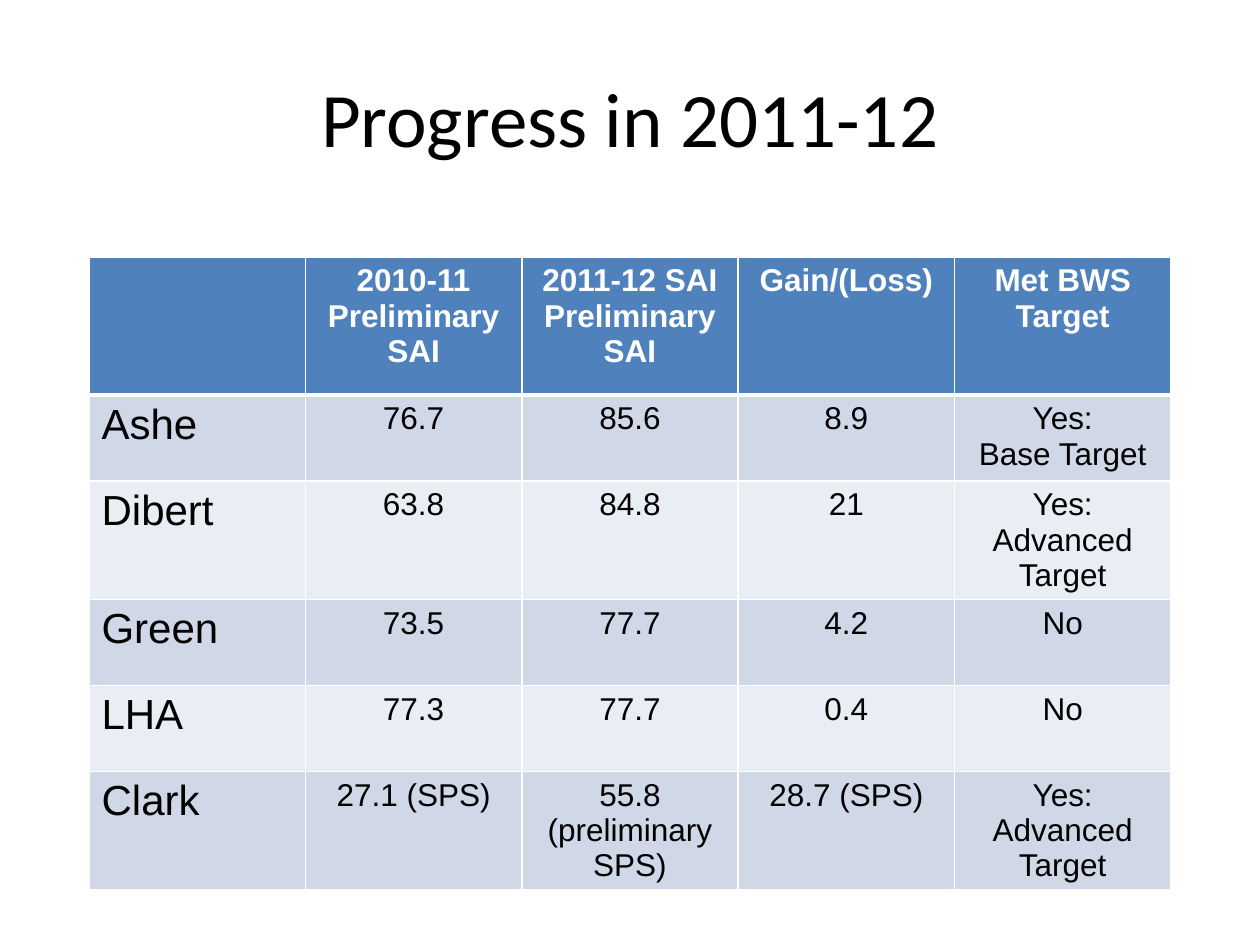
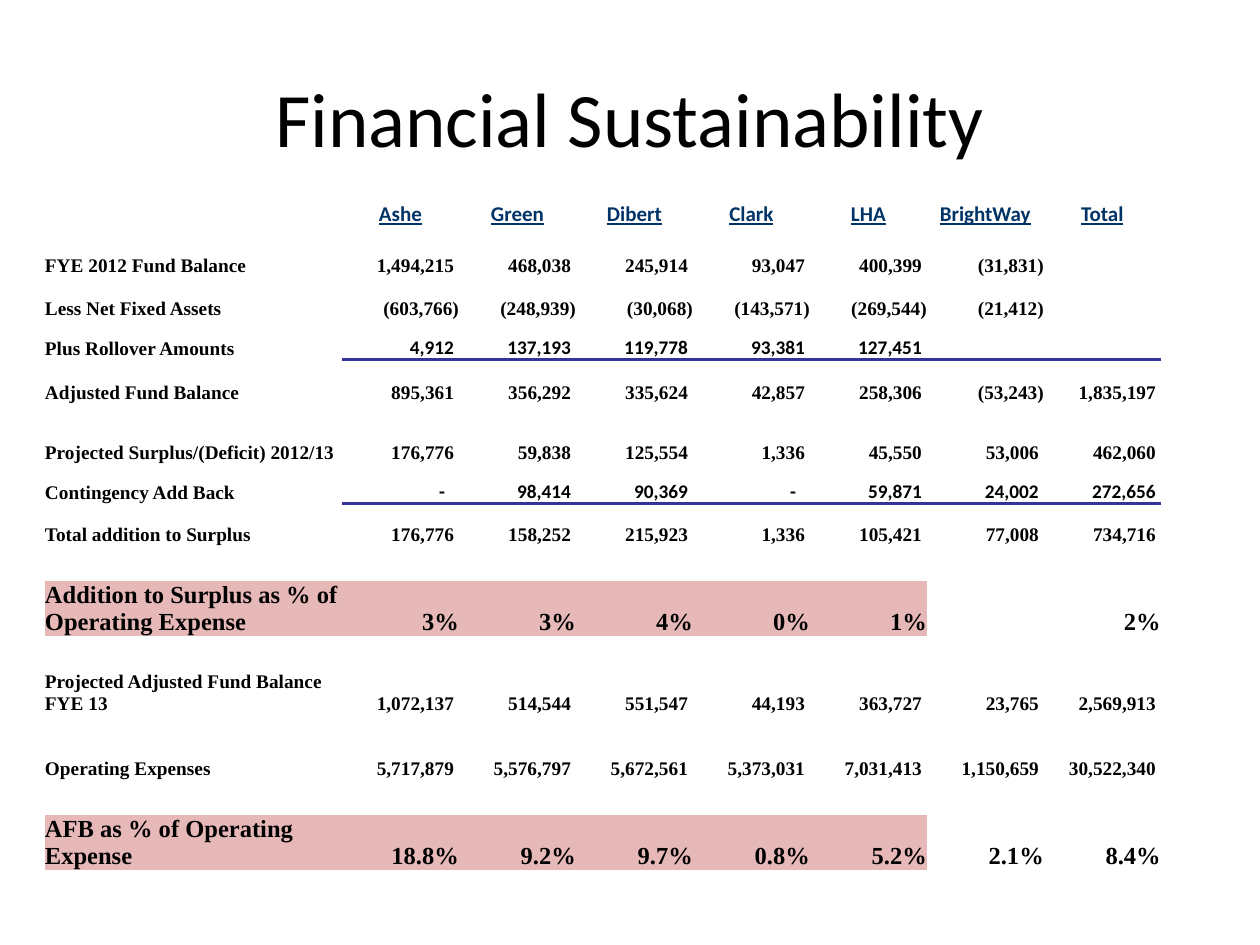
from lxml import etree
from pptx import Presentation
from pptx import util as u
from pptx.dml.color import RGBColor
from pptx.enum import text
from pptx.oxml.ns import qn

EMU_PER_PX = 914400 / 126
SLIDE_BOX = (1260, 945)
TITLE_BOX = (63, 38, 1134, 157)
PROGRESS_BOX = (89, 257, 1082, 632)
FINANCE_BOX = (45, 195, 1139, 675)
PLAIN_STYLE = "{2D5ABB26-0587-4C30-8999-92F81FD0307C}"

WHITE, BLACK = "FFFFFF", "000000"
HEADER_BLUE, BAND_DARK, BAND_LIGHT = "4F81BD", "D0D8E8", "E9EDF4"
NAVY, RULE_BLUE, PINK = "003366", "333399", "E6B9B8"
LEFT, CENTER, RIGHT = text.PP_ALIGN.LEFT, text.PP_ALIGN.CENTER, text.PP_ALIGN.RIGHT
TOP, MIDDLE, BOTTOM = text.MSO_ANCHOR.TOP, text.MSO_ANCHOR.MIDDLE, text.MSO_ANCHOR.BOTTOM

PROGRESS_HEIGHTS = [138, 86, 118, 86, 86, 118]
PROGRESS = [
    ["", "2010-11\nPreliminary SAI", "2011-12 SAI\nPreliminary SAI", "Gain/(Loss)", "Met BWS Target"],
    ["Ashe", "76.7", "85.6", "8.9", "Yes:\nBase Target"],
    ["Dibert", "63.8", "84.8", "21", "Yes: Advanced Target"],
    ["Green", "73.5", "77.7", "4.2", "No"],
    ["LHA", "77.3", "77.7", "0.4", "No"],
    ["Clark", "27.1 (SPS)", "55.8 (preliminary SPS)", "28.7 (SPS)", "Yes: Advanced Target"],
]

FINANCE_WIDTHS = [297] + [117] * 7 + [23]
FINANCE = [
    (39, "", "Ashe Green Dibert Clark LHA BrightWay Total"),
    (43, "FYE 2012 Fund Balance", "1,494,215 468,038 245,914 93,047 400,399 (31,831)"),
    (43, "Less Net Fixed Assets", "(603,766) (248,939) (30,068) (143,571) (269,544) (21,412)"),
    (40, "Plus Rollover Amounts", "4,912 137,193 119,778 93,381 127,451"),
    (44, "Adjusted Fund Balance", "895,361 356,292 335,624 42,857 258,306 (53,243) 1,835,197"),
    (20, "", ""),
    (40, "Projected Surplus/(Deficit) 2012/13", "176,776 59,838 125,554 1,336 45,550 53,006 462,060"),
    (40, "Contingency Add Back", "- 98,414 90,369 - 59,871 24,002 272,656"),
    (42, "Total addition to Surplus", "176,776 158,252 215,923 1,336 105,421 77,008 734,716"),
    (35, "", ""),
    (55, "Addition to Surplus as % of Operating Expense", "3% 3% 4% 0% 1% _ 2%"),
    (35, "", ""),
    (44, "Projected Adjusted Fund Balance FYE 13",
     "1,072,137 514,544 551,547 44,193 363,727 23,765 2,569,913"),
    (26, "", ""),
    (39, "Operating Expenses", "5,717,879 5,576,797 5,672,561 5,373,031 7,031,413 1,150,659 30,522,340"),
    (35, "", ""),
    (55, "AFB as % of Operating Expense", "18.8% 9.2% 9.7% 0.8% 5.2% 2.1% 8.4%"),
]
RULED_ROWS = {"Plus Rollover Amounts", "Contingency Add Back"}


def px(length):
    """Turn px into EMU."""
    return u.Emu(round(length * EMU_PER_PX))


def rgb(hex_color):
    """Turn a hex string into a colour."""
    return RGBColor.from_string(hex_color)


def write(frame, words, size=18, font="Arial", color=BLACK, bold=False, underline=False, align=LEFT):
    """Write one paragraph per line of words into a text frame."""
    frame.text = words
    for paragraph in frame.paragraphs:
        paragraph.alignment = align
        for run in paragraph.runs:
            run.font.size, run.font.name = u.Pt(size), font
            run.font.bold, run.font.underline = bold, underline
            run.font.color.rgb = rgb(color)
        if not words:
            etree.SubElement(paragraph._p, qn("a:endParaRPr"), sz=str(size * 100))


def border(cell, **sides):
    """Draw cell borders; each side (L, R, T, B) gives a colour and points."""
    for side, (color, points) in sides.items():
        line = etree.SubElement(cell._tc.get_or_add_tcPr(), qn(f"a:ln{side}"), w=str(u.Pt(points)))
        fill = etree.SubElement(line, qn("a:solidFill"))
        etree.SubElement(fill, qn("a:srgbClr"), val=color)


def paint(cell, color):
    """Fill a cell with one colour."""
    cell.fill.solid()
    cell.fill.fore_color.rgb = rgb(color)


def add_grid(slide, box, widths, heights):
    """Add an unstyled table at the box with given column widths and row heights."""
    table = slide.shapes.add_table(len(heights), len(widths), *map(px, box)).table
    table.first_row = table.horz_banding = False
    table._tbl.tblPr.find(qn("a:tableStyleId")).text = PLAIN_STYLE
    for column, width in zip(table.columns, widths):
        column.width = px(width)
    for row, height in zip(table.rows, heights):
        row.height = px(height)
    return table


def add_titled_slide(deck, heading):
    """Add a slide with the shared title style."""
    slide = deck.slides.add_slide(deck.slide_layouts[5])
    title = slide.shapes.title
    title.left, title.top, title.width, title.height = map(px, TITLE_BOX)
    title.text_frame.vertical_anchor = MIDDLE
    write(title.text_frame, heading, size=44, font="Calibri", align=CENTER)
    return slide


def progress_table(slide, box):
    """Place the banded table of school scores."""
    columns = len(PROGRESS[0])
    table = add_grid(slide, box, [box[2] / columns] * columns, PROGRESS_HEIGHTS)
    thin, thick = (WHITE, 1), (WHITE, 3)
    for r, scores in enumerate(PROGRESS):
        header = r == 0
        band = HEADER_BLUE if header else BAND_DARK if r % 2 else BAND_LIGHT
        for c, score in enumerate(scores):
            cell = table.cell(r, c)
            border(cell, L=thin, R=thin, T=thick if r == 1 else thin, B=thick if header else thin)
            paint(cell, band)
            school = c == 0 and not header
            write(cell.text_frame, score, size=24 if school else 18, bold=header,
                  color=WHITE if header else BLACK, align=LEFT if school else CENTER)


def right_inset(amount):
    """Return the accounting inset that lines digits up beside brackets."""
    if amount == "-":
        return 14
    return 0 if amount.endswith((")", "%")) else 5


def finance_table(slide, box):
    """Place the fund balance table with its ruled and highlighted rows."""
    table = add_grid(slide, box, FINANCE_WIDTHS, [height for height, _, _ in FINANCE])
    for r, (_, label, amounts) in enumerate(FINANCE):
        header, ruled, ratio = r == 0, label in RULED_ROWS, "%" in label
        entries = [label] + ["" if amount == "_" else amount for amount in amounts.split()]
        entries += [""] * (len(FINANCE_WIDTHS) - len(entries))
        for c, entry in enumerate(entries):
            cell = table.cell(r, c)
            cell.margin_left = cell.margin_top = cell.margin_bottom = 0
            cell.margin_right = px(0 if header or c == 0 else right_inset(entry))
            cell.vertical_anchor = MIDDLE if header else BOTTOM
            if ruled and 1 <= c <= 7:
                border(cell, B=(RULE_BLUE, 2))
            if ratio and c <= 5:
                paint(cell, PINK)
            if not entry:
                write(cell.text_frame, "", size=8)
            elif header:
                write(cell.text_frame, entry, size=12, font="Calibri", color=NAVY,
                      bold=True, underline=True, align=CENTER)
            else:
                write(cell.text_frame, entry, size=14 if ratio else 11, bold=True,
                      font="Calibri" if ruled and c else "Times New Roman",
                      align=RIGHT if c else LEFT)


def main():
    """Build and save the deck."""
    deck = Presentation()
    deck.slide_width, deck.slide_height = map(px, SLIDE_BOX)
    progress_table(add_titled_slide(deck, "Progress in 2011-12"), PROGRESS_BOX)
    finance_table(add_titled_slide(deck, "Financial Sustainability"), FINANCE_BOX)
    deck.save("out.pptx")


if __name__ == "__main__":
    main()
